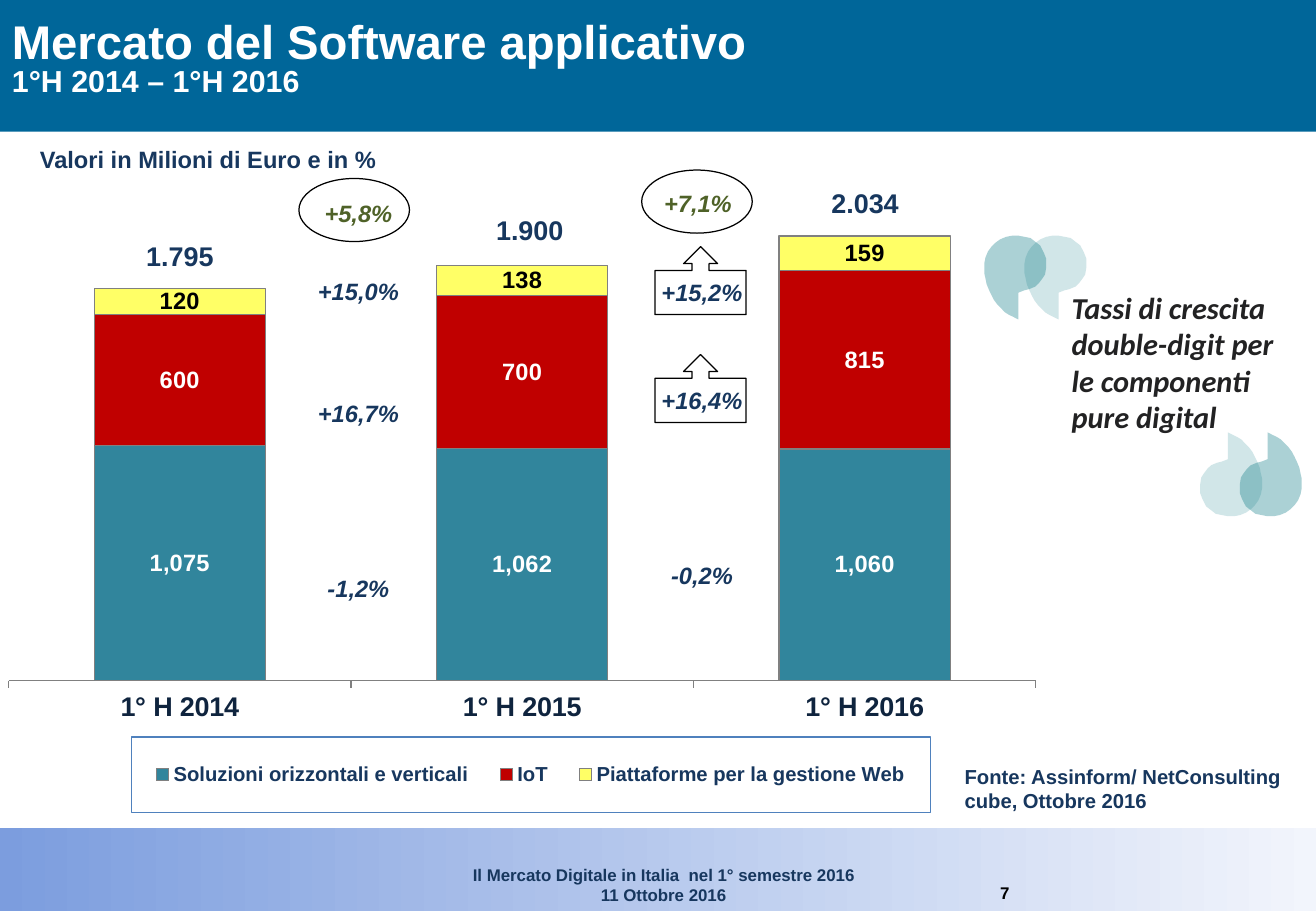
from lxml import etree
from pptx import Presentation
from pptx.chart.data import CategoryChartData
from pptx.dml.color import RGBColor
from pptx.enum.chart import XL_CHART_TYPE, XL_LABEL_POSITION, XL_LEGEND_POSITION, XL_TICK_MARK
from pptx.enum.shapes import MSO_SHAPE
from pptx.enum.text import MSO_ANCHOR, PP_ALIGN
from pptx.oxml import parse_xml
from pptx.oxml.ns import nsdecls, qn
from pptx.util import Pt

RECT, ELLIPSE, CALLOUT = MSO_SHAPE.RECTANGLE, MSO_SHAPE.OVAL, MSO_SHAPE.UP_ARROW_CALLOUT
LEFT, CENTER = PP_ALIGN.LEFT, PP_ALIGN.CENTER
TOP, MIDDLE = MSO_ANCHOR.TOP, MSO_ANCHOR.MIDDLE

COLORS = {
    "header": "006699", "footer_start": "7C9DDE", "footer_end": "F2F5FC",
    "white": "FFFFFF", "black": "000000", "navy": "17375E", "axis": "0F243E",
    "green": "4F6228", "quote": "222223", "mark": "007681", "gray": "808080",
    "teal": "31859C", "red": "C00000", "yellow": "FFFF66", "legend": "4F81BD",
}
W, H = 779.76, 540

TITLE = "Mercato del Software applicativo\v1°H 2014 – 1°H 2016"
UNITS = "Valori in Milioni di Euro e in %"
QUOTE = "Tassi di crescita double-digit per le componenti pure digital"
SOURCE = "Fonte: Assinform/ NetConsulting cube, Ottobre 2016"
FOOTER = "Il Mercato Digitale in Italia  nel 1° semestre 2016\n11 Ottobre 2016"
PAGE = "7"

PERIODS = ["1° H 2014", "1° H 2015", "1° H 2016"]
SERIES = [  # name, values, fill, label colour
    ("Soluzioni orizzontali e verticali", (1075, 1062, 1060), "teal", "white"),
    ("IoT", (600, 700, 815), "red", "white"),
    ("Piattaforme per la gestione Web", (120, 138, 159), "yellow", "black"),
]
CHART_BOX = (0, 126.7, 639.4, 358.6)
PLOT_LAYOUT = (0.008, 0.013, 0.952, 0.759)
LEGEND_LAYOUT = (0.122, 0.865, 0.74, 0.125)

# text, centre x, top
TOTALS = [("1.795", 106.6, 138.2), ("1.900", 313.9, 123.1), ("2.034", 512.6, 106.6)]
TOTAL_GROWTH = [("+5,8%", 212.4, 113), ("+7,1%", 413.6, 107.3)]
PART_GROWTH = [
    ("+15,0%", 212.4, 159.1), ("+16,7%", 212.4, 231.8), ("-1,2%", 212.4, 335.5),
    ("+15,2%", 416, 159.8), ("+16,4%", 416, 223.9), ("-0,2%", 416, 327.6),
]
LABEL_W, LABEL_H = 66, 26.6
OUTLINES = [  # shape, left, top, width, height
    (ELLIPSE, 177.1, 105.8, 65.5, 37.4), (ELLIPSE, 380.2, 100.8, 65.5, 37.4),
    (CALLOUT, 388.1, 146.2, 54, 40.3), (CALLOUT, 388.1, 210.2, 54, 40.3),
]

MARK_W, MARK_H = 36.7, 49.7
MARK_OUTLINE = [
    (20.2, 49.7), (20.2, 33.8), (23.8, 32.4), (26.6, 31.7), (30.2, 30.2), (32.4, 28.1),
    (34.6, 25.2), (36, 23), (36.7, 18.7), (36.7, 13.7), (35.3, 10.1), (33.1, 5.8),
    (30.2, 3.6), (27.4, 1.4), (23.8, 0.7), (20.2, 0), (16.6, 0), (13, 0.7), (9.4, 2.2),
    (6.5, 4.3), (4.3, 6.5), (2.2, 9.4), (0.7, 13), (0, 16.6), (0, 20.2), (0, 22.3),
    (0.7, 25.2), (1.4, 28.8), (2.9, 32.4), (4.3, 35.3), (5.8, 38.2), (7.9, 41),
    (10.1, 43.2), (12.2, 45.4), (14.4, 46.8), (17.3, 48.2),
]
MARKS = [  # left, top, opacity %, closing
    (583.2, 139.7, 33, False), (607, 139.7, 18, False),
    (734.6, 256.3, 33, True), (711.1, 256.3, 18, True),
]


def rgb(name):
    return RGBColor.from_string(COLORS[name])


def set_font(font, size, color, bold=True, italic=False, name="Arial"):
    font.name, font.size, font.bold, font.italic = name, Pt(size), bold, italic
    font.color.rgb = rgb(color)


def add_text(slide, text, box, size, color, align=LEFT, anchor=TOP, wrap=True,
             italic=False, name="Arial"):
    s = slide.shapes.add_textbox(*map(Pt, box))
    tf = s.text_frame
    tf.word_wrap, tf.vertical_anchor = wrap, anchor
    tf.text = text
    for p in tf.paragraphs:
        p.alignment = align
        for r in p.runs:
            set_font(r.font, size, color, italic=italic, name=name)
    return tf


def add_shape(slide, kind, box):
    s = slide.shapes.add_shape(kind, *map(Pt, box))
    s.shadow.inherit = False
    return s


def add_mark(slide, left, top, opacity, closing):
    """Draw a quotation mark; a closing one is turned by half a circle."""
    points = [(MARK_W - x, MARK_H - y) if closing else (x, y) for x, y in MARK_OUTLINE]
    points = [(x * 10, y * 10) for x, y in points]
    builder = slide.shapes.build_freeform(*points[0], scale=Pt(0.1))
    builder.add_line_segments(points[1:], close=True)
    s = builder.convert_to_shape(Pt(left), Pt(top))
    s.shadow.inherit = False
    s.fill.solid()
    s.fill.fore_color.rgb = rgb("mark")
    s.line.fill.background()
    color = s.fill._xPr.find(".//" + qn("a:srgbClr"))
    etree.SubElement(color, qn("a:alpha")).set("val", str(opacity * 1000))


def layout_xml(fractions, inner=False):
    target = '<c:layoutTarget val="inner"/>' if inner else ""
    modes = '<c:xMode val="edge"/><c:yMode val="edge"/>'
    sizes = "".join(f'<c:{k} val="{v}"/>' for k, v in zip("xywh", fractions))
    return parse_xml(f'<c:layout {nsdecls("c")}><c:manualLayout>{target}{modes}{sizes}'
                     "</c:manualLayout></c:layout>")


def place(element, layout, before):
    for old in element.findall(qn("c:layout")):
        element.remove(old)
    element.find(qn(before)).addprevious(layout)


def add_market_chart(slide):
    data = CategoryChartData(number_format="#,##0")
    data.categories = PERIODS
    for name, values, _, _ in SERIES:
        data.add_series(name, values)
    chart = slide.shapes.add_chart(XL_CHART_TYPE.COLUMN_STACKED, *map(Pt, CHART_BOX), data).chart
    set_font(chart.font, 18, "black", bold=False)
    chart.has_title = False
    plot = chart.plots[0]
    plot.gap_width, plot.overlap, plot.vary_by_categories = 100, 100, False
    for series, (_, _, fill, label) in zip(plot.series, SERIES):
        series.format.fill.solid()
        series.format.fill.fore_color.rgb = rgb(fill)
        series.format.line.color.rgb = rgb("gray")
        series.format.line.width = Pt(0.75)
        labels = series.data_labels
        labels.show_value, labels.position = True, XL_LABEL_POSITION.CENTER
        labels.number_format, labels.number_format_is_linked = "#,##0", False
        set_font(labels.font, 14, label)

    axis = chart.category_axis
    axis.major_tick_mark = XL_TICK_MARK.OUTSIDE
    axis.format.line.color.rgb = rgb("gray")
    axis.format.line.width = Pt(0.75)
    set_font(axis.tick_labels.font, 16, "axis")
    values = chart.value_axis
    values.minimum_scale, values.maximum_scale = 0, 2100
    values.has_major_gridlines, values.visible = False, False

    chart.has_legend = True
    legend = chart.legend
    legend.position, legend.include_in_layout = XL_LEGEND_POSITION.BOTTOM, False
    set_font(legend.font, 12, "navy")
    place(legend._element, layout_xml(LEGEND_LAYOUT), "c:overlay")
    legend._element.find(qn("c:txPr")).addprevious(parse_xml(
        f'<c:spPr {nsdecls("c", "a")}><a:ln w="{Pt(0.75)}"><a:solidFill>'
        f'<a:srgbClr val="{COLORS["legend"]}"/></a:solidFill></a:ln></c:spPr>'))
    place(plot._element.getparent(), layout_xml(PLOT_LAYOUT, inner=True), "c:barChart")


def main():
    prs = Presentation()
    prs.slide_width, prs.slide_height = Pt(W), Pt(H)
    slide = prs.slides.add_slide(prs.slide_layouts[6])

    header = add_shape(slide, RECT, (0, 0, W, 78))
    header.fill.solid()
    header.fill.fore_color.rgb = rgb("header")
    footer = add_shape(slide, RECT, (0, 491, W, 49))
    footer.fill.gradient()
    footer.fill.gradient_angle = 0
    for stop, name, position in zip(footer.fill.gradient_stops,
                                    ("footer_start", "footer_end"), (0, 1)):
        stop.color.rgb, stop.position = rgb(name), position
    for band in (header, footer):
        band.line.fill.background()

    add_text(slide, FOOTER, (175, 509, 436.3, 31), 10, "navy", CENTER)
    add_text(slide, PAGE, (573.8, 519.8, 43.2, 19.4), 10, "black", CENTER)
    p = add_text(slide, TITLE, (0, 0, W, 72), 28, "white", anchor=MIDDLE).paragraphs[0]
    p.line_spacing = 0.8
    p.runs[1].font.size = Pt(18)
    add_text(slide, UNITS, (15.8, 82.1, 215.3, 24.5), 14, "navy", CENTER, wrap=False)

    add_market_chart(slide)
    for labels, size, color, italic in ((TOTALS, 16, "navy", False),
                                        (TOTAL_GROWTH, 14, "green", True),
                                        (PART_GROWTH, 14, "navy", True)):
        for text, x, top in labels:
            add_text(slide, text, (x - LABEL_W / 2, top, LABEL_W, LABEL_H), size, color,
                     CENTER, MIDDLE, wrap=False, italic=italic)

    for mark in MARKS:
        add_mark(slide, *mark)
    tf = add_text(slide, QUOTE, (635, 171.4, 124.6, 87.1), 18, "quote", italic=True, name="Calibri")
    tf.margin_left = tf.margin_top = tf.margin_right = tf.margin_bottom = 0
    add_text(slide, SOURCE, (564.5, 449.3, 206.6, 36), 12, "navy")

    for kind, *box in OUTLINES:
        s = add_shape(slide, kind, box)
        s.fill.background()
        s.line.color.rgb = rgb("black")
        s.line.width = Pt(0.75)
    prs.save("out.pptx")


if __name__ == "__main__":
    main()
